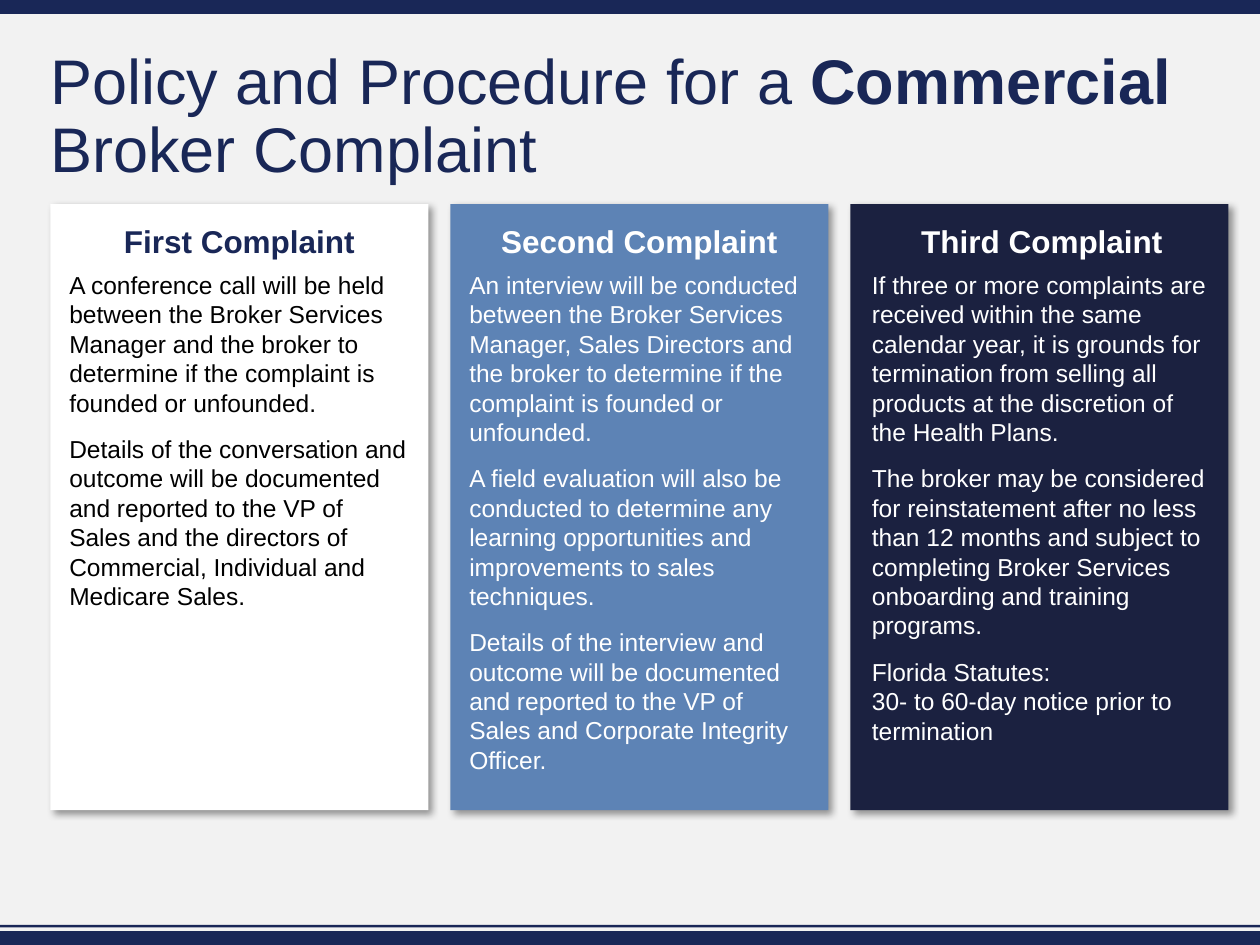
from lxml import etree
from pptx import Presentation
from pptx.dml.color import RGBColor
from pptx.enum.shapes import MSO_SHAPE
from pptx.enum.text import MSO_ANCHOR, MSO_AUTO_SIZE, PP_ALIGN
from pptx.oxml import parse_xml
from pptx.util import Inches, Pt

RECTANGLE = MSO_SHAPE.RECTANGLE
TOP = MSO_ANCHOR.TOP
GROW = MSO_AUTO_SIZE.SHAPE_TO_FIT_TEXT
NO_FIT = MSO_AUTO_SIZE.NONE
CENTER, LEFT = PP_ALIGN.CENTER, PP_ALIGN.LEFT

NAVY = RGBColor(0x19, 0x27, 0x57)
BLUE = RGBColor(0x5D, 0x83, 0xB5)
DARK = RGBColor(0x1B, 0x21, 0x40)
WHITE = RGBColor(0xFF, 0xFF, 0xFF)
BLACK = RGBColor(0, 0, 0)
PALE = RGBColor(0xF2, 0xF2, 0xF2)

FONT = "Arial"
PARAGRAPH_GAP = 9.6
BARS = [(0, 0.11), (7.39, 0.11), (7.34, 0.02)]
TITLE = [("Policy and Procedure for a ", False), ("Commercial ", True), ("Broker Complaint", False)]
CARDS = [
    {
        "heading": "First Complaint", "fill": WHITE, "heading_color": NAVY, "color": BLACK,
        "inset": 0.15, "text_height": 3.11,
        "body": [
            ("A conference call will be held between the Broker Services Manager and the broker "
             "to determine if the complaint is founded or unfounded.", 0),
            ("Details of the conversation and outcome will be documented and reported to the VP of "
             "Sales and the directors of Commercial, Individual and Medicare Sales.", PARAGRAPH_GAP),
        ],
    },
    {
        "heading": "Second Complaint", "fill": BLUE, "heading_color": WHITE, "color": WHITE,
        "inset": 0.15, "text_height": 4.43,
        "body": [
            ("An interview will be conducted between the Broker Services Manager, Sales Directors "
             "and the broker to determine if the complaint is founded or unfounded.", 0),
            ("A field evaluation will also be conducted to determine any learning opportunities "
             "and improvements to sales techniques.", PARAGRAPH_GAP),
            ("Details of the interview and outcome will be documented and reported to the VP of "
             "Sales and Corporate Integrity Officer.", PARAGRAPH_GAP),
        ],
    },
    {
        "heading": "Third Complaint", "fill": DARK, "heading_color": WHITE, "color": WHITE,
        "inset": 0.17, "text_height": 4.19,
        "body": [
            ("If three or more complaints are received within the same calendar year, it is grounds "
             "for termination from selling all products at the discretion of the Health Plans.", 0),
            ("The broker may be considered for reinstatement after no less than 12 months and "
             "subject to completing Broker Services onboarding and training programs.", PARAGRAPH_GAP),
            ("Florida Statutes:", PARAGRAPH_GAP),
            ("30- to 60-day notice prior to termination", 0),
        ],
    },
]
MARGIN, CARD_TOP, CARD_WIDTH, CARD_HEIGHT = 0.4, 1.62, 3, 4.81
CARD_STEP = (6.75 - MARGIN) / 2
TEXT_TOP, TEXT_WIDTH = 1.76, 2.7

SHADOW = (
    '<a:effectLst xmlns:a="http://schemas.openxmlformats.org/drawingml/2006/main">'
    f'<a:outerShdw blurRad="{Pt(4)}" dist="{Pt(3)}" dir="2700000" algn="tl" rotWithShape="0">'
    '<a:srgbClr val="000000"><a:alpha val="40000"/></a:srgbClr>'
    '</a:outerShdw></a:effectLst>'
)


def add_rectangle(page, left, top, width, height, color):
    shape = page.shapes.add_shape(
        RECTANGLE, Inches(left), Inches(top), Inches(width), Inches(height))
    shape.shadow.inherit = False
    shape.fill.solid()
    shape.fill.fore_color.rgb = color
    shape.line.fill.background()
    return shape


def cast_shadow(shape):
    properties = shape.fill._xPr
    for effects in properties.findall("{*}effectLst"):
        properties.replace(effects, parse_xml(etree.fromstring(SHADOW) is not None and SHADOW))


def add_text_box(page, left, top, width, height, fit):
    frame = page.shapes.add_textbox(
        Inches(left), Inches(top), Inches(width), Inches(height)).text_frame
    frame.margin_left = frame.margin_right = frame.margin_top = frame.margin_bottom = 0
    frame.word_wrap = True
    frame.vertical_anchor = TOP
    frame.auto_size = fit
    return frame


def add_span(para, text, size, color, bold=False):
    span = para.add_run()
    span.text = text
    span.font.name = FONT
    span.font.size = Pt(size)
    span.font.bold = bold
    span.font.color.rgb = color


def add_card_text(page, card, left):
    frame = add_text_box(page, left, TEXT_TOP, TEXT_WIDTH, card["text_height"], GROW)
    heading = frame.paragraphs[0]
    heading.alignment = CENTER
    heading.space_after = Pt(6)
    add_span(heading, card["heading"], 18, card["heading_color"], True)
    for text, gap in card["body"]:
        para = frame.add_paragraph()
        para.alignment = LEFT
        para.space_before = Pt(gap)
        add_span(para, text, 14, card["color"])


def main():
    deck = Presentation()
    deck.slide_width, deck.slide_height = Inches(10), Inches(7.5)
    page = deck.slides.add_slide(deck.slide_layouts[6])
    page.background.fill.solid()
    page.background.fill.fore_color.rgb = PALE

    for top, height in BARS:
        add_rectangle(page, 0, top, 10, height, NAVY)

    for index, card in enumerate(CARDS):
        left = MARGIN + index * CARD_STEP
        cast_shadow(add_rectangle(page, left, CARD_TOP, CARD_WIDTH, CARD_HEIGHT, card["fill"]))
        add_card_text(page, card, left + card["inset"])

    title = add_text_box(page, MARGIN, 0.4, 9.2, 0.62, NO_FIT).paragraphs[0]
    title.line_spacing = 0.9
    for text, bold in TITLE:
        add_span(title, text, 36, NAVY, bold)

    deck.save("out.pptx")


if __name__ == "__main__":
    main()
